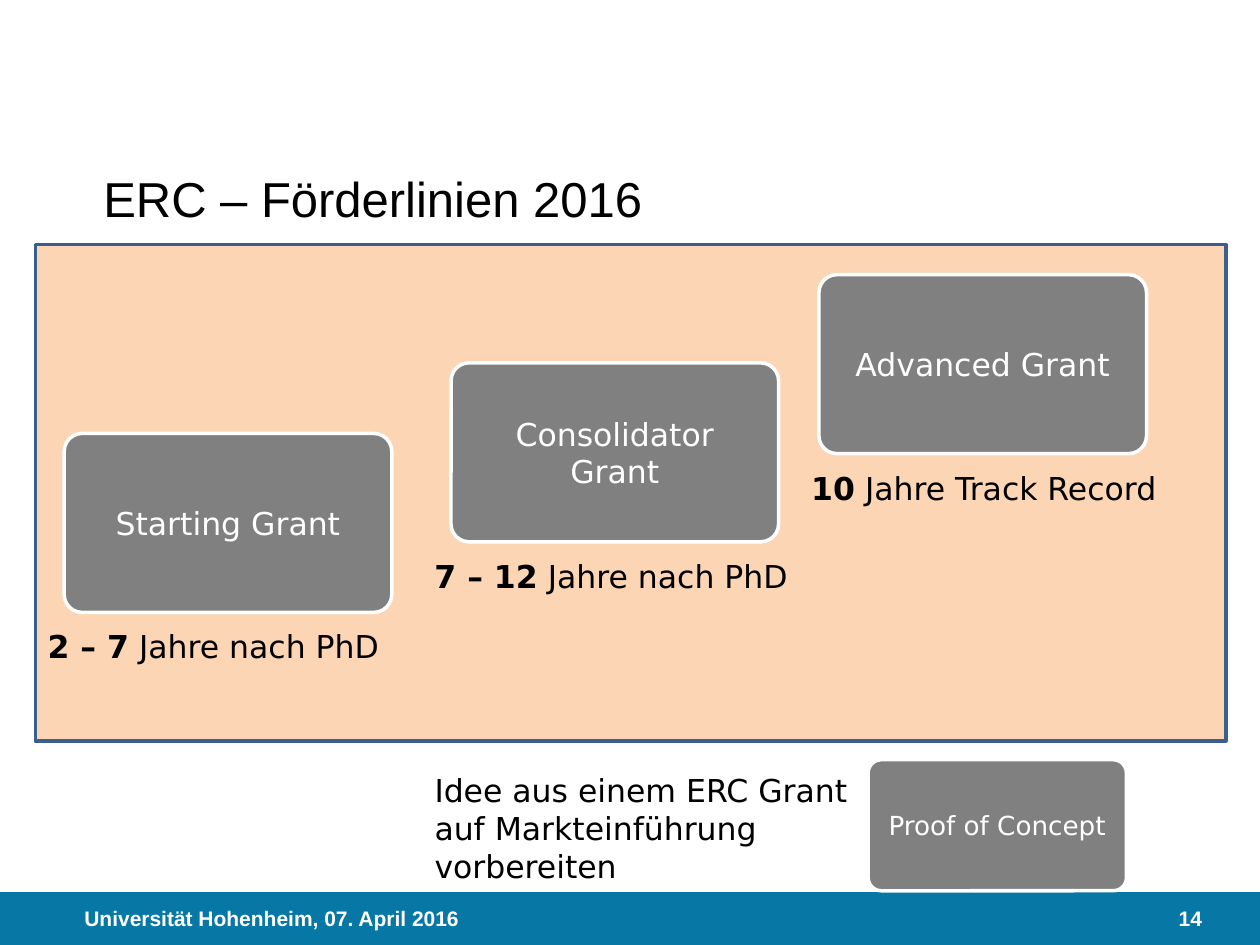
from pptx import Presentation
from pptx.dml.color import RGBColor
from pptx.enum.shapes import MSO_SHAPE
from pptx.enum.text import MSO_ANCHOR, PP_ALIGN
from pptx.util import Inches, Pt

COLORS = {
    "bar": "0778A5",
    "panel": "FCD5B5",
    "panel_line": "3A5F8C",
    "card": "808080",
    "white": "FFFFFF",
    "black": "000000",
}
CARD_WIDTH, CARD_HEIGHT = 2.6, 1.42
CAPTION_OFFSET = 1.49
GRANTS = [
    ("Starting Grant", 0.51, 3.44, 0.28, "2 – 7", " Jahre nach PhD"),
    ("Consolidator Grant", 3.58, 2.88, 3.35, "7 – 12", " Jahre nach PhD"),
    ("Advanced Grant", 6.5, 2.18, 6.34, "10", " Jahre Track Record"),
]


class SlideBuilder:
    """Hold the style and current page and add each kind of element."""

    def __init__(self, page):
        self.page = page
        self.body_font = "DejaVu Sans"
        self.heading_font = "Arial"

    def color(self, name):
        return RGBColor.from_string(COLORS[name])

    def fill_text(self, box, spans, size, color="black", font=None,
                  align=PP_ALIGN.LEFT, anchor=MSO_ANCHOR.TOP, inset=None):
        frame = box.text_frame
        frame.word_wrap = True
        frame.vertical_anchor = anchor
        if inset is not None:
            for side in ("left", "right", "top", "bottom"):
                setattr(frame, f"margin_{side}", Inches(inset))
        para = frame.paragraphs[0]
        para.alignment = align
        for text, bold in spans:
            span = para.add_run()
            span.text = text
            style = {"name": font or self.body_font, "size": Pt(size), "bold": bold}
            for name, value in style.items():
                setattr(span.font, name, value)
            span.font.color.rgb = self.color(color)

    def title(self, text, left, top, width, height):
        box = self.page.shapes.title
        place = {"left": left, "top": top, "width": width, "height": height}
        for name, value in place.items():
            setattr(box, name, Inches(value))
        self.fill_text(box, [(text, False)], 28, font=self.heading_font,
                       anchor=MSO_ANCHOR.MIDDLE)

    def shape(self, kind, left, top, width, height, fill, line=None):
        box = self.page.shapes.add_shape(
            kind, Inches(left), Inches(top), Inches(width), Inches(height))
        box.shadow.inherit = False
        box.fill.solid()
        box.fill.fore_color.rgb = self.color(fill)
        if line:
            box.line.color.rgb = self.color(line)
            box.line.width = Pt(2)
        else:
            box.line.fill.background()
        return box

    def card(self, text, left, top, width=CARD_WIDTH, height=CARD_HEIGHT, size=18):
        box = self.shape(MSO_SHAPE.ROUNDED_RECTANGLE, left, top, width, height,
                         "card", "white")
        box.adjustments[0] = 0.1
        self.fill_text(box, [(text, False)], size, "white",
                       align=PP_ALIGN.CENTER, anchor=MSO_ANCHOR.MIDDLE)

    def text(self, spans, left, top, width, height, size=18, **style):
        box = self.page.shapes.add_textbox(
            Inches(left), Inches(top), Inches(width), Inches(height))
        self.fill_text(box, spans, size, **style)

    def footer(self, text, left, width, align):
        self.text([(text, True)], left, 7.08, width, 0.42, 12, color="white",
                  font=self.heading_font, align=align,
                  anchor=MSO_ANCHOR.MIDDLE, inset=0)


def main():
    deck = Presentation()
    deck.slide_width, deck.slide_height = Inches(10), Inches(7.5)
    builder = SlideBuilder(deck.slides.add_slide(deck.slide_layouts[5]))

    builder.shape(MSO_SHAPE.RECTANGLE, 0, 7.08, 10, 0.42, "bar")
    builder.footer("14", 6.98, 2.56, PP_ALIGN.RIGHT)
    builder.footer("Universität Hohenheim, 07. April 2016", 0.67, 3.14, PP_ALIGN.LEFT)
    builder.shape(MSO_SHAPE.RECTANGLE, 0.28, 1.94, 9.45, 3.94, "panel", "panel_line")
    builder.title("ERC – Förderlinien 2016", 0.72, 1.08, 9, 0.98)

    for name, left, top, caption_left, years, condition in GRANTS:
        builder.card(name, left, top)
        builder.text([(years, True), (condition, False)],
                     caption_left, top + CAPTION_OFFSET, 3.23, 0.4)

    builder.card("Proof of Concept", 6.89, 6.03, 2.05, 1.04, 15)
    builder.text([("Idee aus einem ERC Grant auf Markteinführung vorbereiten", False)],
                 3.35, 6.07, 3.78, 1.01)
    deck.save("out.pptx")


if __name__ == "__main__":
    main()
